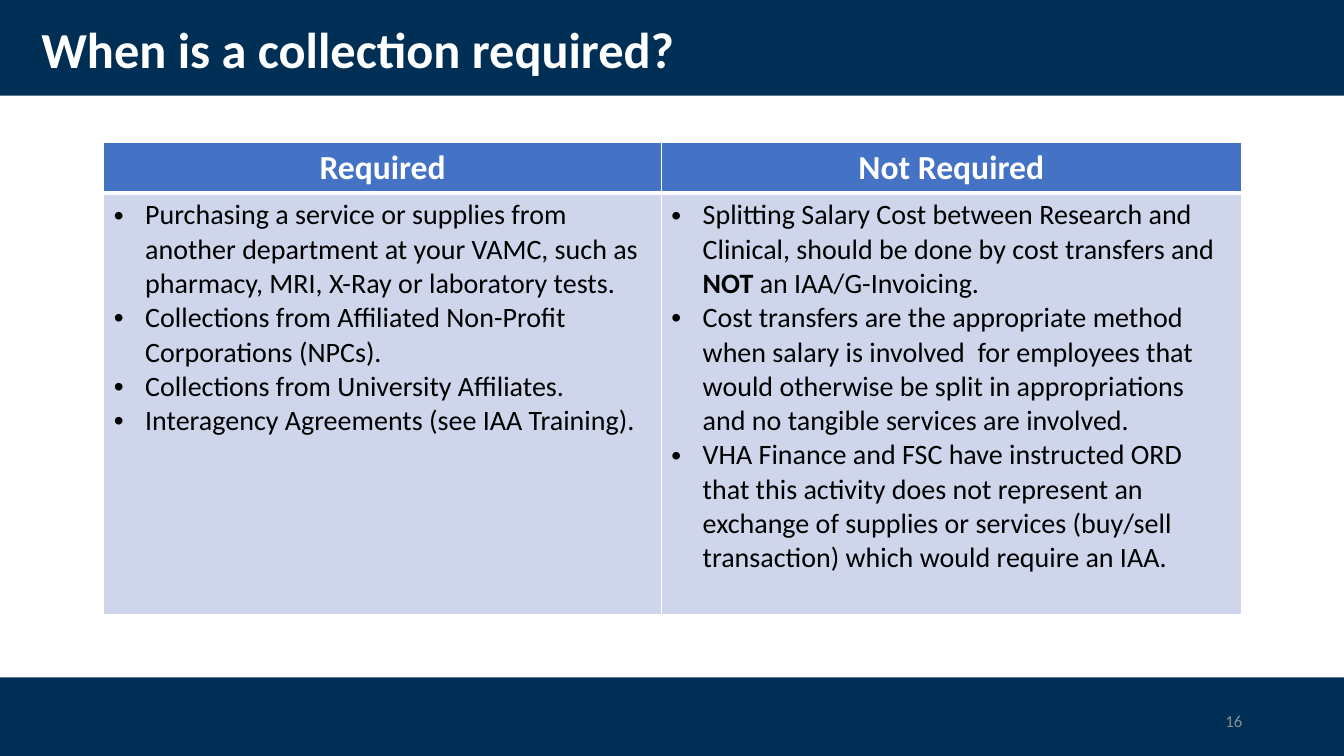
from lxml import etree
from pptx import Presentation
from pptx.dml.color import RGBColor
from pptx.enum.shapes import MSO_SHAPE
from pptx.enum.text import MSO_ANCHOR, MSO_AUTO_SIZE, PP_ALIGN
from pptx.oxml.ns import qn
from pptx.util import Inches, Pt

RECT = MSO_SHAPE.RECTANGLE
MIDDLE = MSO_ANCHOR.MIDDLE
NO_FIT = MSO_AUTO_SIZE.NONE
LEFT, CENTER, RIGHT = PP_ALIGN.LEFT, PP_ALIGN.CENTER, PP_ALIGN.RIGHT

FONT = "Calibri"
NAVY, BLUE, PALE = "002F56", "4472C4", "CFD5EA"
WHITE, BLACK, GRAY = "FFFFFF", "000000", "8C8C8C"

# Text between ** marks is bold
COLUMNS = [
    ("Required", 5.53, [
        "Purchasing a service or supplies from another department at your "
        "VAMC, such as pharmacy, MRI, X-Ray or laboratory tests.",
        "Collections from Affiliated Non-Profit Corporations (NPCs).",
        "Collections from University Affiliates.",
        "Interagency Agreements (see IAA Training).",
    ]),
    ("Not Required", 5.75, [
        "Splitting Salary Cost between Research and Clinical, should be done "
        "by cost transfers and **NOT** an IAA/G-Invoicing.",
        "Cost transfers are the appropriate method when salary is involved "
        " for employees that would otherwise be split in appropriations and "
        "no tangible services are involved.",
        "VHA Finance and FSC have instructed ORD that this activity does not "
        "represent an exchange of supplies or services (buy/sell transaction) "
        "which would require an IAA.",
    ]),
]


def color(code):
    return RGBColor.from_string(code)


def style(run, size, code, bold=False):
    run.font.name = FONT
    run.font.size = Pt(size)
    run.font.bold = bold
    run.font.color.rgb = color(code)


def write(frame, text, size, code, align, bold=False):
    frame.text = text
    para = frame.paragraphs[0]
    para.alignment = align
    style(para.runs[0], size, code, bold)
    return para


def add_band(slide, top, height):
    band = slide.shapes.add_shape(
        RECT, 0, Inches(top), Inches(13.33), Inches(height))
    band.shadow.inherit = False
    band.fill.solid()
    band.fill.fore_color.rgb = color(NAVY)
    band.line.fill.background()


def set_title(slide, text):
    title = slide.shapes.title
    title.left, title.top = Inches(0.31), Inches(0.18)
    title.width, title.height = Inches(11.5), Inches(0.68)
    frame = title.text_frame
    frame.auto_size = NO_FIT
    frame.vertical_anchor = MIDDLE
    write(frame, text, 36, WHITE, LEFT, True).line_spacing = 0.9
    # Bring the title in front of the bands
    slide.shapes._spTree.append(title._element)


def add_number(slide, text):
    box = slide.shapes.add_textbox(
        Inches(9.42), Inches(6.95), Inches(3), Inches(0.4))
    frame = box.text_frame
    frame.word_wrap = True
    frame.vertical_anchor = MIDDLE
    write(frame, text, 12, GRAY, RIGHT)


def paint(cell, code, bottom, top):
    props = cell._tc.get_or_add_tcPr()
    for side, width in (("L", 1), ("R", 1), ("T", top), ("B", bottom)):
        line = etree.SubElement(props, qn("a:ln" + side), w=str(Pt(width)))
        fill = etree.SubElement(line, qn("a:solidFill"))
        etree.SubElement(fill, qn("a:srgbClr"), val=WHITE)
    cell.fill.solid()
    cell.fill.fore_color.rgb = color(code)


def add_bullet(para, text):
    props = para._p.get_or_add_pPr()
    indent = Inches(0.31)
    props.set("marL", str(indent))
    props.set("indent", str(-indent))
    etree.SubElement(props, qn("a:buFont"), typeface="Arial")
    etree.SubElement(props, qn("a:buChar"), char="•")
    for i, part in enumerate(text.split("**")):
        run = para.add_run()
        run.text = part
        style(run, 20, BLACK, i % 2 == 1)


def add_grid(slide):
    total = sum(width for _, width, _ in COLUMNS)
    heights = (0.5, 4.18)
    table = slide.shapes.add_table(
        len(heights), len(COLUMNS), Inches(1.03), Inches(1.41),
        Inches(total), Inches(sum(heights))).table
    for row, height in zip(table.rows, heights):
        row.height = Inches(height)
    for col, (head, width, items) in enumerate(COLUMNS):
        table.columns[col].width = Inches(width)
        top, body = table.cell(0, col), table.cell(1, col)
        paint(top, BLUE, 3, 1)
        paint(body, PALE, 1, 3)
        write(top.text_frame, head, 24, WHITE, CENTER, True)
        frame = body.text_frame
        for i, item in enumerate(items):
            para = frame.add_paragraph() if i else frame.paragraphs[0]
            add_bullet(para, item)


def main():
    deck = Presentation()
    deck.slide_width, deck.slide_height = Inches(13.33), Inches(7.5)
    slide = deck.slides.add_slide(deck.slide_layouts[5])

    # Bands at the head and foot
    add_band(slide, 0, 0.95)
    add_band(slide, 6.72, 0.78)

    # Content
    set_title(slide, "When is a collection required?")
    add_grid(slide)
    add_number(slide, "16")
    deck.save("out.pptx")


if __name__ == "__main__":
    main()
